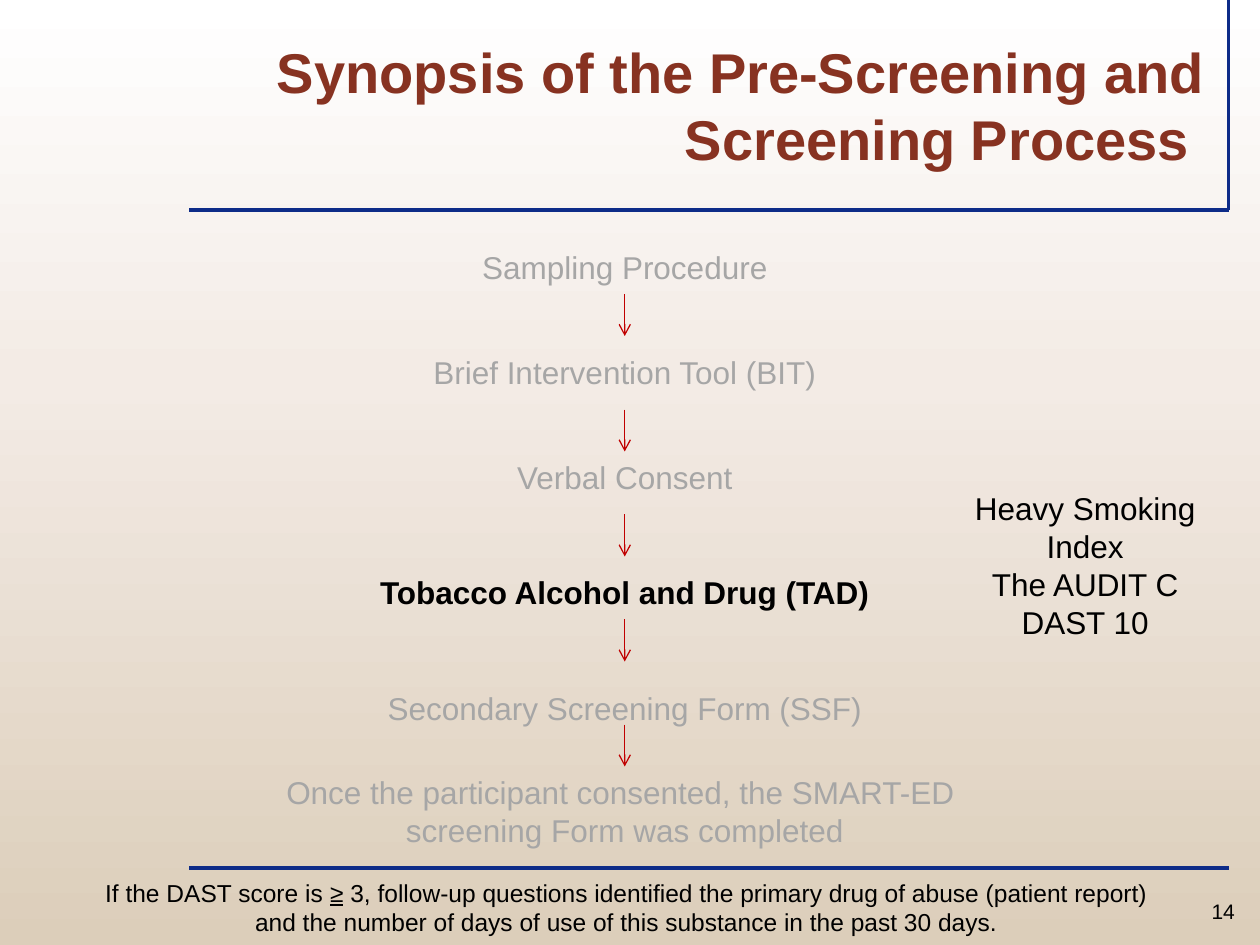
from copy import deepcopy
from typing import NamedTuple

from lxml import etree
from pptx import Presentation
from pptx.dml.color import RGBColor
from pptx.enum.shapes import MSO_CONNECTOR
from pptx.enum.text import MSO_ANCHOR, PP_ALIGN
from pptx.oxml.ns import qn
from pptx.util import Inches, Pt

STRAIGHT = MSO_CONNECTOR.STRAIGHT
CENTER, RIGHT = PP_ALIGN.CENTER, PP_ALIGN.RIGHT
BOTTOM = MSO_ANCHOR.BOTTOM

FONT = "Arial"
COLORS = {
    "title": "873221", "rule": "0D2B88", "arrow": "C00000",
    "muted": "A6A6A6", "text": "000000",
    "top": "FFFFFF", "middle": "F3EBE5", "bottom": "DCCEBA",
}
COLS, ROWS = 120, 90  # twelve cells to the inch
AXIS = 59.5           # column on which the steps are centred


class Box(NamedTuple):
    col: float
    row: float
    cols: float
    rows: float


class Step(NamedTuple):
    text: str
    row: float
    cols: float
    rows: float = 5
    active: bool = False


STEPS = [
    Step("Sampling Procedure ", 23, 30),
    Step("Brief Intervention Tool (BIT)", 33, 42),
    Step("Verbal Consent", 43, 27),
    Step("Tobacco Alcohol and Drug (TAD)", 54, 53, active=True),
    Step("Secondary Screening Form (SSF)", 65, 51),
    Step("Once the participant consented, the SMART-ED \n"
         "screening Form was completed", 73, 105, 8.5),
]
ARROWS = [28, 39, 49, 59, 69]
RULES = [(117, 0, 117, 20), (18, 20, 117, 20), (18, 82.7, 117, 82.7)]
NOTE = ("If the DAST score is ", "≥",
        " 3, follow-up questions identified the primary drug of abuse "
        "(patient report) ")


def cell(n: float) -> int:
    return Inches(n / 12)


def color(name: str) -> RGBColor:
    return RGBColor.from_string(COLORS[name])


def style(frame, size: float, hue: str, bold: bool = False, align=CENTER) -> None:
    for para in frame.paragraphs:
        para.alignment = align
        for run in para.runs:
            font = run.font
            font.name, font.size, font.bold = FONT, Pt(size), bold
            font.color.rgb = color(hue)


def place(shape, box: Box) -> None:
    shape.left, shape.top, shape.width, shape.height = map(cell, box)


def label(slide, text: str, box: Box, size: float = 18,
          hue: str = "text", bold: bool = False):
    frame = slide.shapes.add_textbox(*map(cell, box)).text_frame
    frame.word_wrap = True
    frame.text = text
    style(frame, size, hue, bold)
    return frame


def stroke(slide, ends: tuple, hue: str, width: float, arrow: bool = False) -> None:
    line = slide.shapes.add_connector(STRAIGHT, *map(cell, ends))
    line.line.color.rgb = color(hue)
    line.line.width = Pt(width)
    props = line.element.spPr
    if arrow:
        etree.SubElement(props.find(qn("a:ln")), qn("a:tailEnd"), type="arrow")
    etree.SubElement(props, qn("a:effectLst"))


def paint(slide) -> None:
    fill = slide.background.fill
    fill.gradient()
    fill.gradient_angle = 270
    stops = slide.element.find(".//" + qn("a:gsLst"))
    stops.insert(1, deepcopy(stops[0]))
    for stop, name, pos in zip(fill.gradient_stops,
                               ("top", "middle", "bottom"), (0, 0.4, 1)):
        stop.color.rgb = color(name)
        stop.position = pos


def main() -> None:
    deck = Presentation()
    deck.slide_width, deck.slide_height = cell(COLS), cell(ROWS)
    slide = deck.slides.add_slide(deck.slide_layouts[5])
    paint(slide)

    for ends in RULES:
        stroke(slide, ends, "rule", 2.25)
    label(slide, "14", Box(113, 85, 7, 3.6), 12)

    title = slide.shapes.title
    place(title, Box(6, 0, 110, 17))
    title.text_frame.text = "Synopsis of the Pre-Screening and Screening Process "
    title.text_frame.vertical_anchor = BOTTOM
    style(title.text_frame, 32, "title", True, RIGHT)

    for step in STEPS:
        box = Box(AXIS - step.cols / 2, step.row, step.cols, step.rows)
        label(slide, step.text, box, hue="text" if step.active else "muted",
              bold=step.active)
    for row in ARROWS:
        stroke(slide, (AXIS, row, AXIS, row + 4), "arrow", 0.75, arrow=True)

    label(slide, "Heavy Smoking Index\nThe AUDIT C\nDAST 10", Box(89, 46, 28.7, 15.6))

    note = label(slide, "\nand the number of days of use of this substance "
                 "in the past 30 days. ", Box(0, 83, COLS, 7))
    for part in NOTE:
        run = note.paragraphs[0].add_run()
        run.text = part
        run.font.underline = part == "≥"
    style(note, 14, "text")

    deck.save("out.pptx")


if __name__ == "__main__":
    main()
